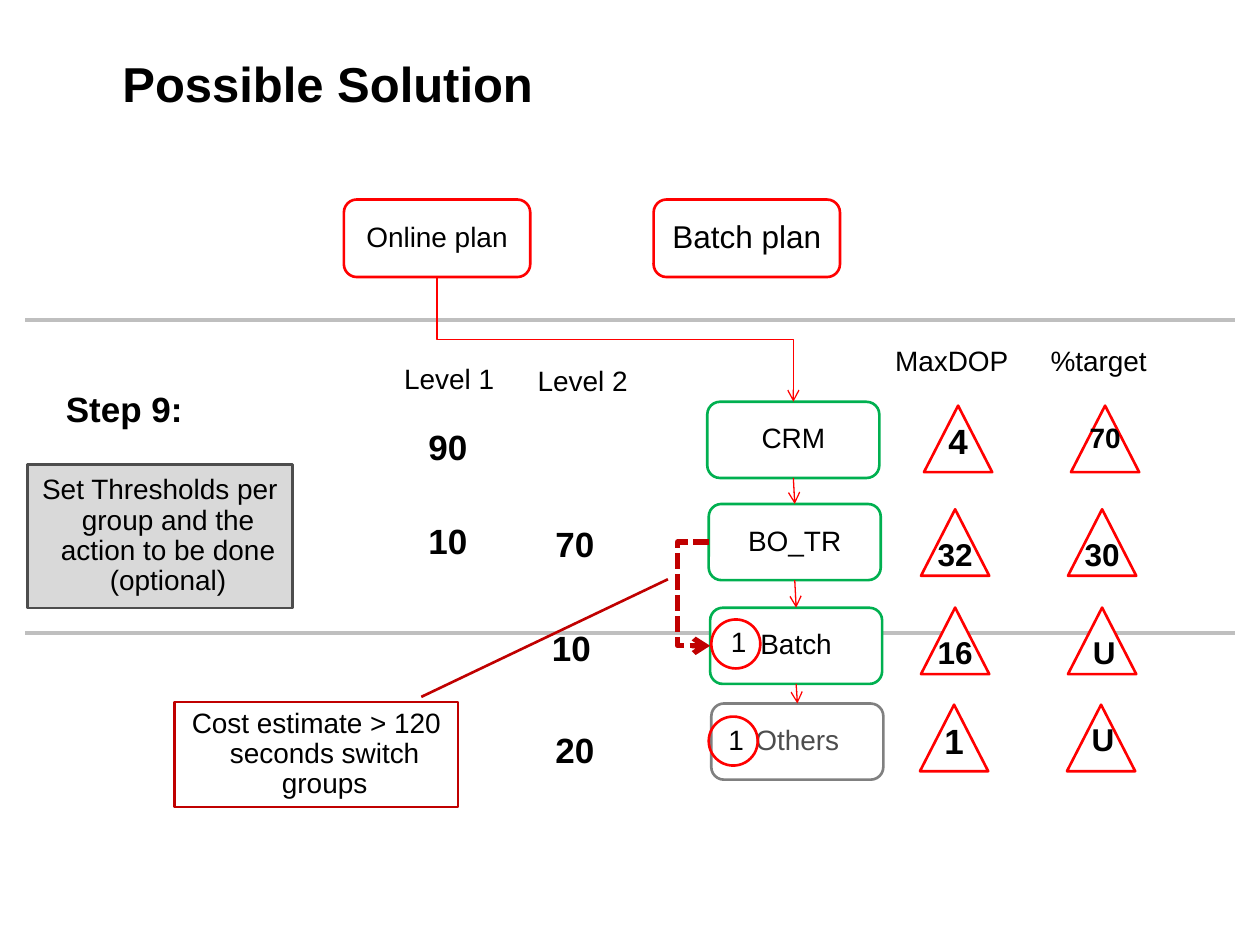
from lxml.etree import SubElement
from pptx import Presentation
from pptx.dml.color import RGBColor
from pptx.enum.dml import MSO_LINE
from pptx.enum.shapes import MSO_CONNECTOR, MSO_SHAPE
from pptx.enum.text import MSO_ANCHOR, MSO_AUTO_SIZE, PP_ALIGN
from pptx.oxml.ns import qn
from pptx.util import Pt

RED, DARK_RED, GREEN = "FF0000", "C00000", "00B050"
GREY, LIGHT_GREY, CHARCOAL = "808080", "BFBFBF", "4D4D4D"
TOP, LEFT, BOTTOM = 0, 1, 2


def color(value):
    return RGBColor.from_string(value)


def set_attrs(obj, values):
    for name, value in values.items():
        setattr(obj, name, value)


def write(tf, text, size, ink="000000", bold=False, align=PP_ALIGN.CENTER):
    p = tf.paragraphs[0]
    set_attrs(p, {"alignment": align, "line_spacing": 0.9, "space_before": Pt(0)})
    r = p.add_run()
    r.text = text
    set_attrs(r.font, {"name": "Arial", "size": Pt(size), "bold": bold})
    r.font.color.rgb = color(ink)
    return p


def add_title(slide, text):
    s = slide.shapes.title
    set_attrs(s, {"left": Pt(70), "top": Pt(30.5), "width": Pt(597), "height": Pt(68)})
    tf = s.text_frame
    set_attrs(tf, {"margin_left": 0, "margin_right": 0, "margin_top": 0,
                   "margin_bottom": 0, "vertical_anchor": MSO_ANCHOR.TOP})
    write(tf, text, 28, bold=True, align=PP_ALIGN.LEFT).line_spacing = 1.0


def add_box(slide, kind, x, y, w, h, line, text="", size=16, fill=None, ink="000000"):
    s = slide.shapes.add_shape(kind, Pt(x), Pt(y), Pt(w), Pt(h))
    s.shadow.inherit = False
    if fill:
        s.fill.solid()
        s.fill.fore_color.rgb = color(fill)
    else:
        s.fill.background()
    s.line.color.rgb = color(line)
    s.line.width = Pt(1.5)
    if text:
        set_attrs(s.text_frame, {"word_wrap": True, "vertical_anchor": MSO_ANCHOR.MIDDLE})
        p = write(s.text_frame, text, size, ink)
        # Hanging indent
        pPr = p._p.get_or_add_pPr()
        pPr.set("marL", str(Pt(9.4)))
        pPr.set("indent", str(-Pt(9.4)))
    return s


def add_label(slide, cx, y, text, size=16, bold=False, em=0.58):
    """Unwrapped text centred on cx; em is the mean letter width."""
    w = 14.4 + em * size * len(text)
    s = slide.shapes.add_textbox(Pt(cx - w / 2), Pt(y), Pt(w), Pt(size * 1.08 + 7.2))
    set_attrs(s.text_frame, {"word_wrap": False,
                             "auto_size": MSO_AUTO_SIZE.SHAPE_TO_FIT_TEXT})
    write(s.text_frame, text, size, bold=bold)


def add_marker(slide, x, y, text, size, dy):
    w, h = 39, 38
    add_box(slide, MSO_SHAPE.ISOSCELES_TRIANGLE, x, y, w, h, RED, fill="FFFFFF")
    add_label(slide, x + w / 2, y + dy, text, size, bold=True)


def add_line(slide, line, width, ends=(0, 0, 0, 0), kind=MSO_CONNECTOR.STRAIGHT):
    s = slide.shapes.add_connector(kind, *map(Pt, ends))
    s.line.color.rgb = color(line)
    s.line.width = Pt(width)
    SubElement(s._element.spPr, qn("a:effectLst"))
    return s


def add_arrow(slide, line, width, start, end, kind=MSO_CONNECTOR.STRAIGHT):
    """Arrow between (shape, connection site) pairs."""
    s = add_line(slide, line, width, kind=kind)
    s.begin_connect(*start)
    s.end_connect(*end)
    SubElement(s.line._get_or_add_ln(), qn("a:tailEnd"), type="arrow")
    return s


def turn_downward(s):
    """Make an elbow leave vertically: a quarter turn about its centre."""
    x, y, w, h = s.left, s.top, s.width, s.height
    set_attrs(s, {"left": x + (w - h) // 2, "top": y + (h - w) // 2,
                  "width": h, "height": w})
    xfrm = s._element.spPr.find(qn("a:xfrm"))
    xfrm.set("rot", "16200000")
    xfrm.set("flipH", "1")


def set_bend(s, offset):
    """Place the elbow's middle segment at an offset from its start."""
    av = s._element.spPr.find(qn("a:prstGeom")).get_or_add_avLst()
    ratio = round(Pt(offset) / s.width * 100000)
    SubElement(av, qn("a:gd"), name="adj1", fmla=f"val {ratio}")


def main():
    prs = Presentation()
    prs.slide_width, prs.slide_height = Pt(720), Pt(540)
    slide = prs.slides.add_slide(prs.slide_layouts[5])
    add_title(slide, "Possible Solution")

    # Plans and dividers
    rounded = MSO_SHAPE.ROUNDED_RECTANGLE
    online = add_box(slide, rounded, 196.5, 114, 106.5, 44.3, RED, "Online plan")
    add_box(slide, rounded, 373.5, 114, 106.5, 44.3, RED, "Batch plan", 18)
    for y in (183, 361.5):
        add_line(slide, LIGHT_GREY, 2.25, (14.4, y, 705.6, y))

    # Chain of consumer groups
    groups = [
        add_box(slide, rounded, x, y, 98.3, 43.5, line, text, fill=fill, ink=ink)
        for x, y, text, line, fill, ink in (
            (404.2, 229.6, "CRM", GREEN, None, "000000"),
            (405, 288, "BO_TR", GREEN, None, "000000"),
            (405.8, 347.3, "Batch", GREEN, "FFFFFF", "000000"),
            (406.5, 402, "Others", GREY, None, CHARCOAL))]
    crm, bo_tr, batch, _ = groups
    turn_downward(add_arrow(slide, RED, 0.75, (online, BOTTOM), (crm, TOP),
                            MSO_CONNECTOR.ELBOW))
    for upper, lower in zip(groups, groups[1:]):
        add_arrow(slide, RED, 0.75, (upper, BOTTOM), (lower, TOP))

    # Column headings
    for cx, y, text, em in ((256.7, 205, "Level 1", 0.5), (333, 206.3, "Level 2", 0.5),
                            (543.8, 195, "MaxDOP", 0.7), (627.8, 195, "%target", 0.52)):
        add_label(slide, cx, y, text, em=em)

    # Level percentages
    for cx, y, text in ((256, 242.3, "90"), (256, 296, "10"), (328.5, 298, "70"),
                        (328.5, 415.5, "20"), (326.5, 357, "10")):
        add_label(slide, cx, y, text, 20, bold=True)

    # MaxDOP and %target markers: x, y, text offset, (text, size) per column
    for x, y, dy, *marks in (
            (528, 231.8, 7.4, ("4", 20), ("70", 16)),
            (526.3, 291, 13.7, ("32", 18), ("30", 18)),
            (526.3, 347.2, 13.7, ("16", 18), ("U", 18)),
            (525.7, 402.7, 7.9, ("1", 20), ("U", 18))):
        for col, (text, size) in enumerate(marks):
            add_marker(slide, x + 84 * col, y, text, size, dy)

    # Session limits
    for x, y in ((406.5, 354), (405, 409.5)):
        add_box(slide, MSO_SHAPE.OVAL, x, y, 28, 28, RED, "1")

    # Step description
    add_label(slide, 71, 220.5, "Step 9:", 20, bold=True, em=0.52)
    add_box(slide, MSO_SHAPE.RECTANGLE, 15.6, 265.4, 151.5, 82, CHARCOAL,
            "Set Thresholds per group and the action to be done (optional)",
            fill="D9D9D9")

    # Group switch and its condition
    switch = add_arrow(slide, DARK_RED, 3, (bo_tr, LEFT), (batch, LEFT),
                       MSO_CONNECTOR.ELBOW)
    switch.line.dash_style = MSO_LINE.SQUARE_DOT
    set_bend(switch, -18)
    callout = add_box(slide, MSO_SHAPE.LINE_CALLOUT_1, 99.8, 401.2, 162, 60, DARK_RED,
                      "Cost estimate > 120 seconds switch groups")
    for i, value in enumerate((-0.05, 0.87, -1.17, 1.74)):
        callout.adjustments[i] = value

    prs.save("out.pptx")


if __name__ == "__main__":
    main()
